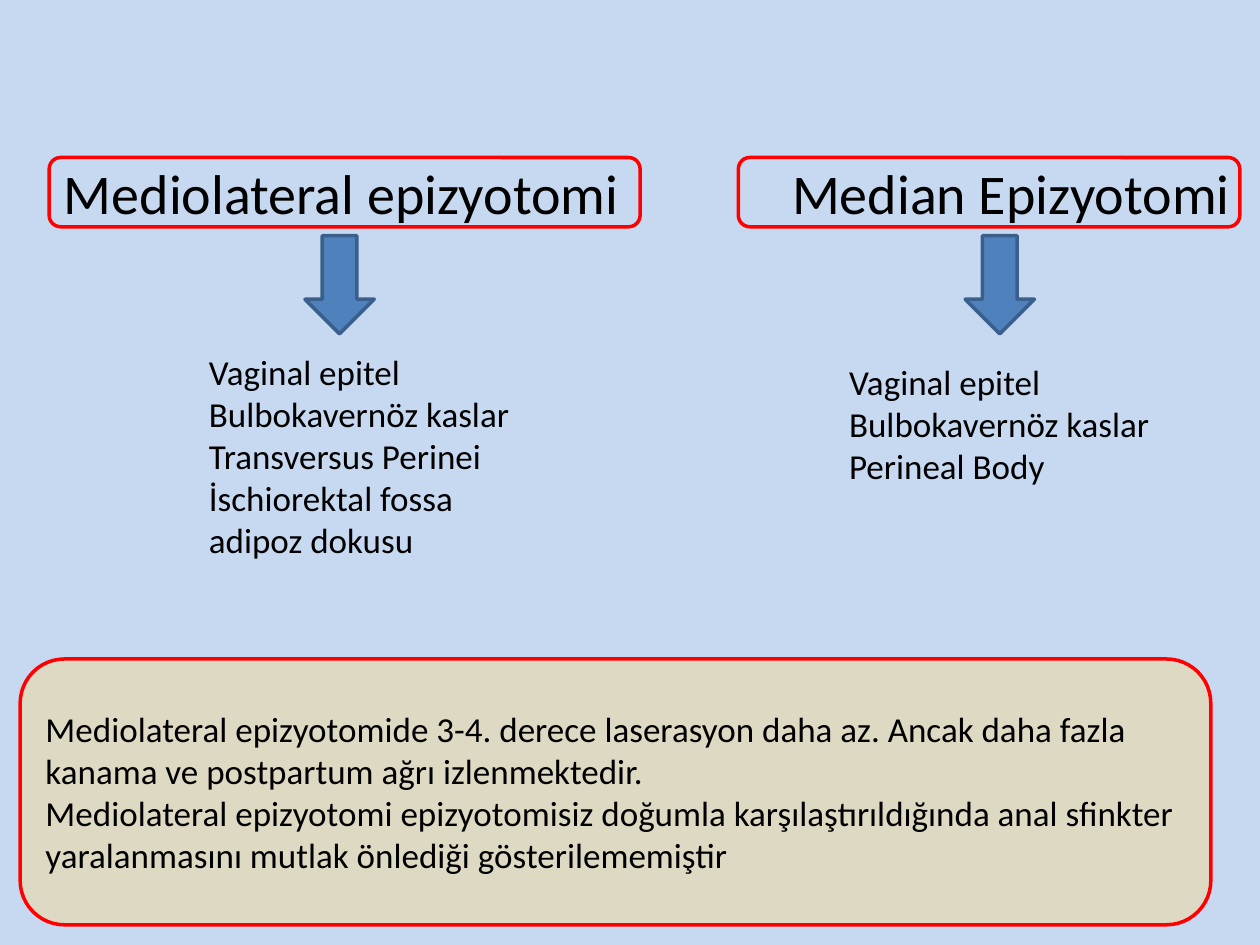
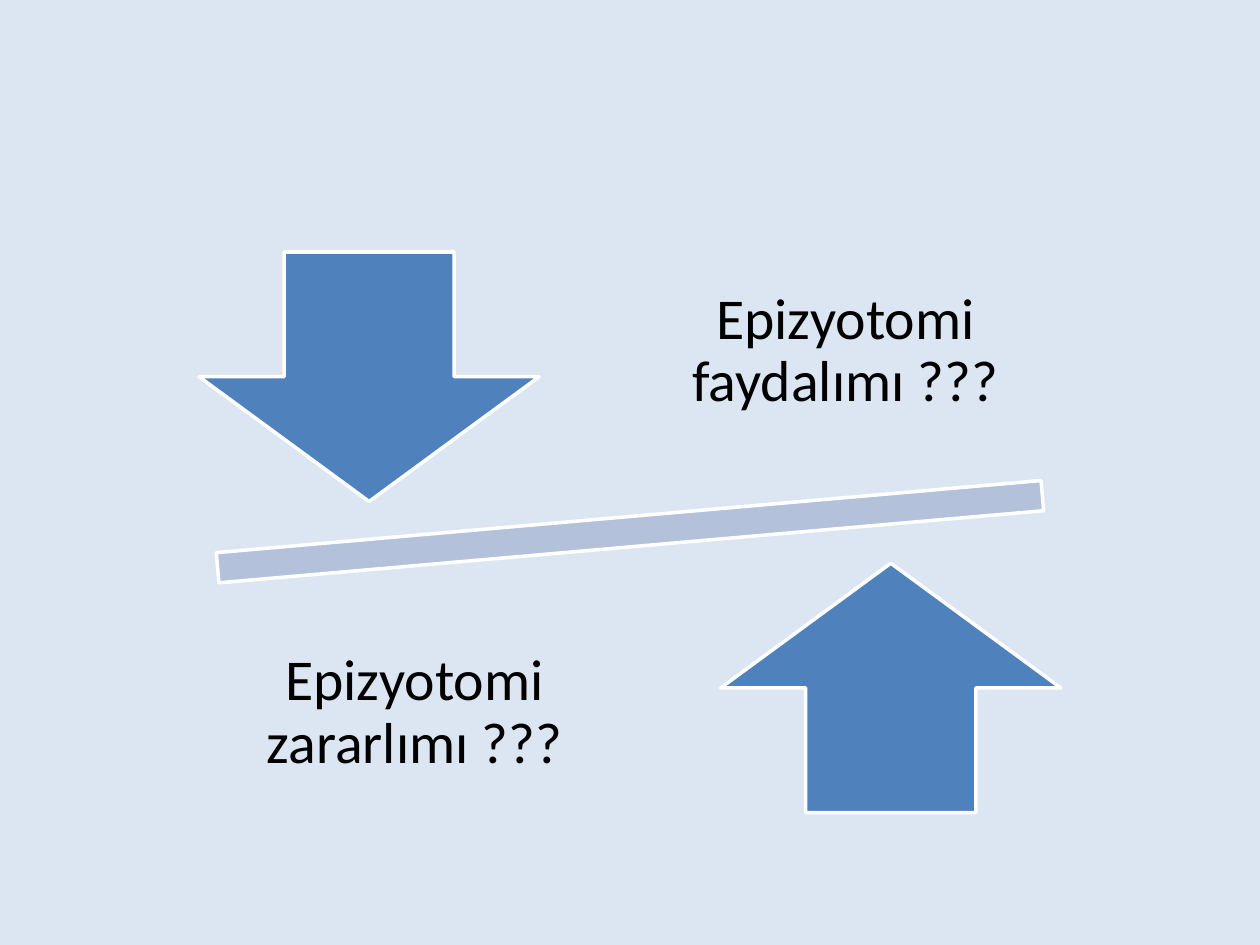
from dataclasses import dataclass

from pptx import Presentation
from pptx.dml.color import RGBColor
from pptx.enum.shapes import MSO_SHAPE as Preset
from pptx.enum.text import MSO_ANCHOR as Anchor, PP_ALIGN as Align
from pptx.util import Inches, Pt


@dataclass(frozen=True)
class Theme:
    font: str = "Calibri"
    text: str = "000000"
    arrow: str = "4F81BD"
    arrow_edge: str = "3A5F8C"
    frame: str = "FF0000"
    panel: str = "DDD9C3"
    beam: str = "B3C1DB"
    white: str = "FFFFFF"
    comparison_background: str = "C6D9F1"
    balance_background: str = "DCE6F2"
    heading_size: int = 32
    body_size: int = 20
    question_size: int = 33
    line_width: int = 2


THEME = Theme()
COLUMNS, ROWS = 100, 75
SLIDE_WIDTH, SLIDE_HEIGHT = Inches(10), Inches(7.5)


def across(columns):
    return round(SLIDE_WIDTH * columns / COLUMNS)


def down(rows):
    return round(SLIDE_HEIGHT * rows / ROWS)


def place(left, top, width, height):
    return across(left), down(top), across(width), down(height)


def add_slide(presentation, background):
    slide = presentation.slides.add_slide(presentation.slide_layouts[6])
    fill = slide.background.fill
    fill.solid()
    fill.fore_color.rgb = RGBColor.from_string(background)
    return slide


def add_figure(slide, preset, cells, fill, line, rotation=0):
    shape = slide.shapes.add_shape(preset, *place(*cells))
    shape.shadow.inherit = False
    shape.rotation = rotation
    if fill:
        shape.fill.solid()
        shape.fill.fore_color.rgb = RGBColor.from_string(fill)
    else:
        shape.fill.background()
    shape.line.color.rgb = RGBColor.from_string(line)
    shape.line.width = Pt(THEME.line_width)
    return shape


def write(shape, lines, size, align=Align.LEFT, anchor=Anchor.MIDDLE, spacing=1.0):
    text_frame = shape.text_frame
    text_frame.text = "\n".join(lines)
    text_frame.word_wrap = True
    text_frame.vertical_anchor = anchor
    for paragraph in text_frame.paragraphs:
        paragraph.alignment = align
        paragraph.line_spacing = spacing
        for run in paragraph.runs:
            run.font.name = THEME.font
            run.font.size = Pt(size)
            run.font.color.rgb = RGBColor.from_string(THEME.text)
    return text_frame


def add_heading(slide, text, left, width, indent):
    frame = add_figure(slide, Preset.ROUNDED_RECTANGLE, (left, 12.5, width, 5.5),
                       None, THEME.frame)
    text_frame = write(frame, [text], THEME.heading_size)
    text_frame.margin_left = across(indent)
    text_frame.margin_right = text_frame.margin_top = text_frame.margin_bottom = 0


def add_small_arrow(slide, left):
    add_figure(slide, Preset.DOWN_ARROW, (left, 18.7, 5.5, 7.8),
               THEME.arrow, THEME.arrow_edge)


def add_tissue_list(slide, lines, cells):
    box = slide.shapes.add_textbox(*place(*cells))
    write(box, lines, THEME.body_size, anchor=Anchor.TOP)


def add_panel(slide, lines):
    panel = add_figure(slide, Preset.ROUNDED_RECTANGLE, (1.6, 52.3, 94.5, 21.1),
                       THEME.panel, THEME.frame)
    write(panel, lines, THEME.body_size)


def add_large_arrow(slide, preset, left, top):
    add_figure(slide, preset, (left, top, 27, 19.8), THEME.arrow, THEME.white)


def add_question(slide, text, left, top, width):
    box = slide.shapes.add_textbox(*place(left, top, width, 20.8))
    text_frame = write(box, [text], THEME.question_size, Align.CENTER, spacing=0.9)
    text_frame.margin_left = text_frame.margin_right = across(2.6)
    text_frame.margin_top = text_frame.margin_bottom = down(2.6)


def build_comparison(presentation):
    slide = add_slide(presentation, THEME.comparison_background)
    add_heading(slide, "Mediolateral epizyotomi", 3.9, 46.9, 0.9)
    add_heading(slide, "Median Epizyotomi", 58.6, 39.8, 4)
    for left in (24.2, 76.6):
        add_small_arrow(slide, left)
    shared_tissues = ["Vaginal epitel", "Bulbokavernöz kaslar"]
    add_tissue_list(
        slide,
        shared_tissues + ["Transversus Perinei", "İschiorektal fossa adipoz dokusu"],
        (15.6, 27.3, 26.6, 17.8))
    add_tissue_list(slide, shared_tissues + ["Perineal Body"], (66.4, 28.1, 28.1, 11.1))
    add_panel(slide, [
        "Mediolateral epizyotomide 3-4. derece laserasyon daha az. "
        "Ancak daha fazla kanama ve postpartum ağrı izlenmektedir.",
        "Mediolateral epizyotomi epizyotomisiz doğumla karşılaştırıldığında "
        "anal sfinkter yaralanmasını mutlak önlediği gösterilememiştir",
    ])


def build_balance(presentation):
    slide = add_slide(presentation, THEME.balance_background)
    add_figure(slide, Preset.MATH_MINUS, (5.3, 37.1, 89.4, 10.2),
               THEME.beam, THEME.white, rotation=355)
    add_large_arrow(slide, Preset.DOWN_ARROW, 15.8, 20)
    add_question(slide, "Epizyotomi faydalımı ???", 49.8, 17.5, 34.6)
    add_large_arrow(slide, Preset.UP_ARROW, 57.2, 44.7)
    add_question(slide, "Epizyotomi zararlımı ???", 18.5, 46.2, 28.8)


def main():
    presentation = Presentation()
    presentation.slide_width, presentation.slide_height = SLIDE_WIDTH, SLIDE_HEIGHT
    build_comparison(presentation)
    build_balance(presentation)
    presentation.save("out.pptx")


if __name__ == "__main__":
    main()
